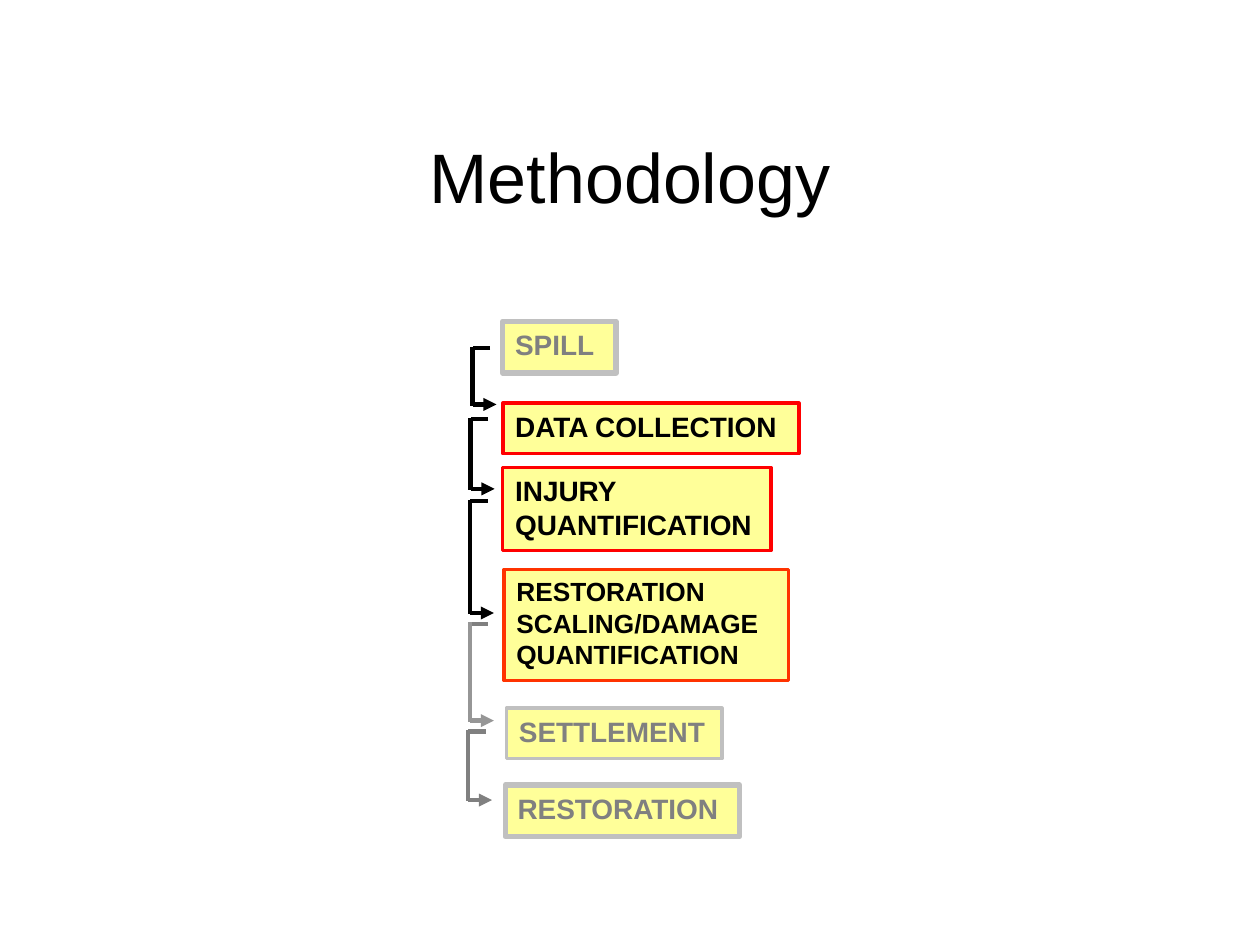
import pptx
import pptx.util
import pptx.dml.color
import pptx.enum.shapes
import pptx.enum.text
import pptx.oxml
import pptx.oxml.ns

THEME = {
    "font": "Arial",
    "title_size": 40,
    "step_size": 16,
    "long_step_size": 15,
    "arrow_width": 2.5,
    "fill": "FFFF99",
    "black": "000000",
    "grey": "808080",
    "light_grey": "969696",
    "pale": "C0C0C0",
    "red": "FF0000",
    "orange": "FF3300",
}

deck = pptx.Presentation()
deck.slide_width = pptx.util.Inches(10)
deck.slide_height = pptx.util.Inches(7.5)
column = deck.slide_width / 100
row = deck.slide_height / 75
page = deck.slides.add_slide(deck.slide_layouts[6])


def write(box, text, size, color, bold, align, anchor):
    frame = box.text_frame
    frame.word_wrap = True
    frame.vertical_anchor = anchor
    frame.text = text
    for para in frame.paragraphs:
        para.alignment = align
        for span in para.runs:
            span.font.name = THEME["font"]
            span.font.size = pptx.util.Pt(size)
            span.font.bold = bold
            span.font.color.rgb = pptx.dml.color.RGBColor.from_string(THEME[color])


def draw_line(start, end, color, arrow):
    line = page.shapes.add_connector(
        pptx.enum.shapes.MSO_CONNECTOR.STRAIGHT,
        round(start[0] * column), round(start[1] * row),
        round(end[0] * column), round(end[1] * row),
    )
    line.line.color.rgb = pptx.dml.color.RGBColor.from_string(THEME[color])
    line.line.width = pptx.util.Pt(THEME["arrow_width"])
    if arrow:
        head = pptx.oxml.parse_xml(
            f'<a:tailEnd {pptx.oxml.ns.nsdecls("a")} type="triangle"/>'
        )
        line.line._get_or_add_ln().append(head)
    effects = pptx.oxml.parse_xml(f'<a:effectLst {pptx.oxml.ns.nsdecls("a")}/>')
    line._element.spPr.append(effects)


title = page.shapes.add_textbox(
    round(5 * column), round(7.7 * row), round(90 * column), round(12.5 * row)
)
write(title, "Methodology", THEME["title_size"], "black", False,
      pptx.enum.text.PP_ALIGN.CENTER, pptx.enum.text.MSO_ANCHOR.MIDDLE)

steps = [
    ("SPILL", 39.9, 25.5, 9, 4.1, "pale", 3, "grey", "step_size"),
    ("DATA COLLECTION", 39.9, 32, 23.5, 4, "red", 2, "black", "step_size"),
    ("INJURY\nQUANTIFICATION", 39.9, 37.1, 21.3, 6.6, "red", 2, "black", "step_size"),
    ("RESTORATION\nSCALING/DAMAGE\nQUANTIFICATION", 40, 45.2, 22.6, 8.8,
     "orange", 2, "black", "long_step_size"),
    ("SETTLEMENT", 40.2, 56.2, 17.1, 4, "pale", 2, "grey", "step_size"),
    ("RESTORATION", 40.1, 62.3, 18.6, 4.1, "pale", 3, "grey", "step_size"),
]
for text, left, top, width, height, border, weight, color, size in steps:
    box = page.shapes.add_shape(
        pptx.enum.shapes.MSO_SHAPE.RECTANGLE,
        round(left * column), round(top * row),
        round(width * column), round(height * row),
    )
    box.shadow.inherit = False
    box.fill.solid()
    box.fill.fore_color.rgb = pptx.dml.color.RGBColor.from_string(THEME["fill"])
    box.line.color.rgb = pptx.dml.color.RGBColor.from_string(THEME[border])
    box.line.width = pptx.util.Pt(weight)
    write(box, text, THEME[size], color, True,
          pptx.enum.text.PP_ALIGN.LEFT, pptx.enum.text.MSO_ANCHOR.TOP)

brackets = [
    (37.5, 27.6, 32.1, "black", "black"),
    (37.35, 33.25, 38.8, "black", "black"),
    (37.3, 39.75, 48.65, "black", "black"),
    (37.3, 49.5, 57.2, "grey", "light_grey"),
    (37.15, 58.05, 63.5, "grey", "grey"),
]
for spine, top, bottom, start_color, color in brackets:
    draw_line((spine + 1.4, top), (spine, top), start_color, False)
    draw_line((spine, top - 0.1), (spine, bottom + 0.1), color, False)
    draw_line((spine, bottom), (spine + 1.9, bottom), color, True)

deck.save("out.pptx")
